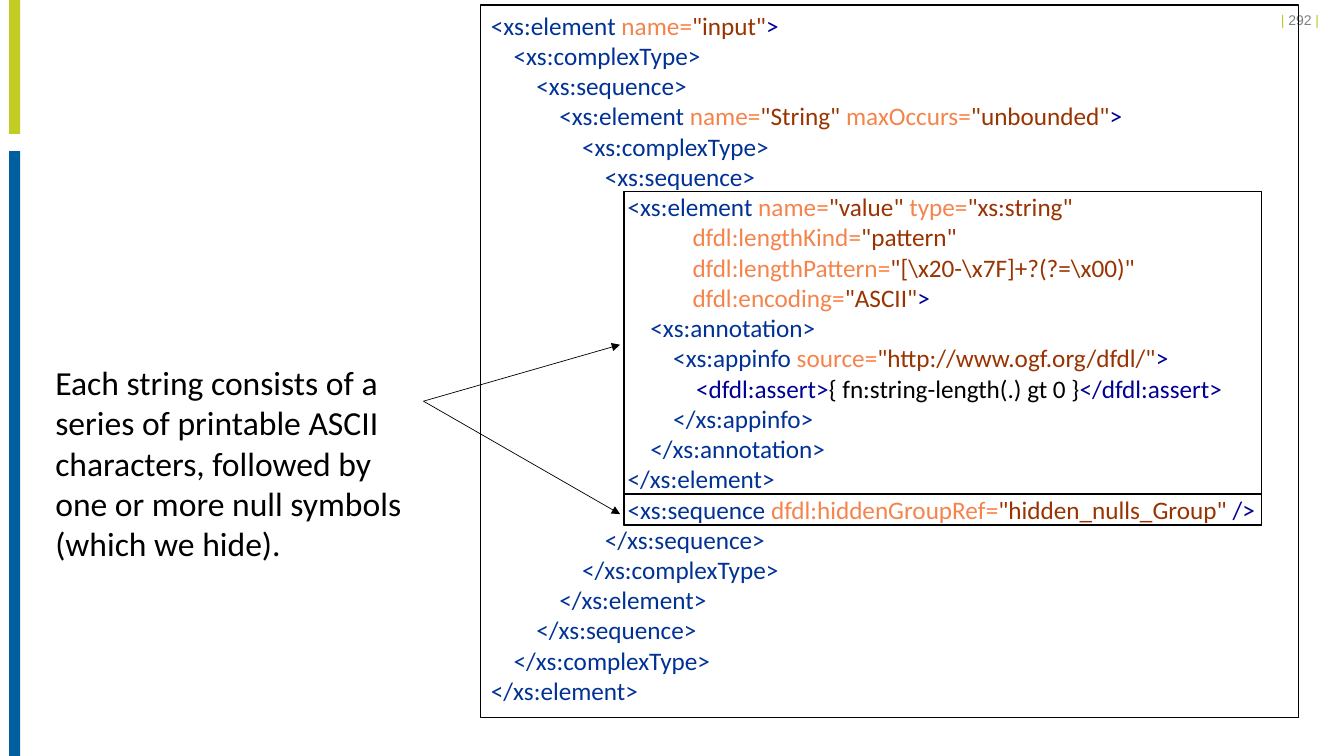
from pptx import Presentation
from pptx.dml.color import RGBColor
from pptx.enum.shapes import MSO_CONNECTOR, MSO_SHAPE
from pptx.enum.text import MSO_ANCHOR, PP_ALIGN
from pptx.oxml.ns import qn
from pptx.util import Inches, Pt
from lxml.etree import SubElement

COLORS = {
    "lime": "C1CD23", "blue": "005F9E", "grey": "808080", "black": "000000",
    "tag": "003296", "name": "F5844C", "equals": "FF8040", "value": "993300",
    "end": "000096", "text": "000000",
}

NOTE = ("Each string consists of a series of printable ASCII characters, "
        "followed by one or more null symbols (which we hide).")
PAGE_NUMBER = [("lime", "| "), ("grey", "292 "), ("lime", "| ")]

CODE = [
    (0, [("tag", "<xs:element"), ("attribute", ' name="input"'), ("end", ">")]),
    (4, [("tag", "<xs:complexType>")]),
    (8, [("tag", "<xs:sequence>")]),
    (12, [("tag", "<xs:element"), ("attribute", ' name="String"'),
          ("attribute", ' maxOccurs="unbounded"'), ("end", ">")]),
    (16, [("tag", "<xs:complexType>")]),
    (20, [("tag", "<xs:sequence>")]),
    (24, [("tag", "<xs:element"), ("attribute", ' name="value"'),
          ("attribute", ' type="xs:string"')]),
    (28, [("attribute", '\tdfdl:lengthKind="pattern"')]),
    (28, [("attribute", '\tdfdl:lengthPattern=' + r'"[\x20-\x7F]+?(?=\x00)"')]),
    (28, [("attribute", '\tdfdl:encoding="ASCII"'), ("end", ">")]),
    (28, [("tag", "<xs:annotation>")]),
    (32, [("tag", "<xs:appinfo"),
          ("attribute", ' source="http://www.ogf.org/dfdl/"'), ("end", ">")]),
    (36, [("end", "<dfdl:assert>"), ("text", "{ fn:string-length(.) gt 0 }"),
          ("end", "</dfdl:assert>")]),
    (32, [("tag", "</xs:appinfo>")]),
    (28, [("tag", "</xs:annotation>")]),
    (24, [("tag", "</xs:element>")]),
    (24, [("tag", "<xs:sequence"),
          ("attribute", ' dfdl:hiddenGroupRef="hidden_nulls_Group"'), ("end", " />")]),
    (20, [("tag", "</xs:sequence>")]),
    (16, [("tag", "</xs:complexType>")]),
    (12, [("tag", "</xs:element>")]),
    (8, [("tag", "</xs:sequence>")]),
    (4, [("tag", "</xs:complexType>")]),
    (0, [("tag", "</xs:element>")]),
]

BARS = [("lime", 0, 1.33), ("blue", 1.5, 6)]
CODE_FRAME = (4.77, 0.05, 8.11, 7.07)
HIGHLIGHT_FRAMES = [(6.19, 1.9, 6.32, 3.31), (6.19, 4.9, 6.32, 0.31)]
ARROW_START = (4.2, 3.98)
ARROW_ENDS = [(6.15, 3.42), (6.15, 5.1)]


def color(name):
    return RGBColor.from_string(COLORS[name])


def add_rectangle(page, place, fill=None, line_width=None):
    shape = page.shapes.add_shape(MSO_SHAPE.RECTANGLE, *map(Inches, place))
    shape.shadow.inherit = False
    if fill:
        shape.fill.solid()
        shape.fill.fore_color.rgb = color(fill)
    else:
        shape.fill.background()
    if line_width:
        shape.line.color.rgb = color("black")
        shape.line.width = Pt(line_width)
    else:
        shape.line.fill.background()
    return shape


def add_span(para, text, color_name, size, font_name="Calibri"):
    span = para.add_run()
    span.text = text
    span.font.name = font_name
    span.font.size = Pt(size)
    span.font.color.rgb = color(color_name)


def add_text_box(page, place):
    box = page.shapes.add_textbox(*map(Inches, place))
    box.text_frame.word_wrap = True
    return box.text_frame.paragraphs[0]


def add_arrow(page, start, end):
    points = map(Inches, start + end)
    arrow = page.shapes.add_connector(MSO_CONNECTOR.STRAIGHT, *points)
    arrow.line.color.rgb = color("black")
    arrow.line.width = Pt(0.5)
    SubElement(arrow.line._get_or_add_ln(), qn("a:tailEnd"), type="triangle")
    SubElement(arrow._element.spPr, qn("a:effectLst"))


def code_pieces(indent, parts):
    if indent:
        yield "text", " " * indent
    for role, text in parts:
        if role == "attribute":
            yield from zip(("name", "equals", "value"), text.partition("="))
        else:
            yield role, text


def add_code(page):
    frame = add_rectangle(page, CODE_FRAME, line_width=0.75).text_frame
    frame.word_wrap = True
    frame.vertical_anchor = MSO_ANCHOR.TOP
    para = frame.paragraphs[0]
    para.alignment = PP_ALIGN.LEFT
    for number, (indent, parts) in enumerate(CODE):
        if number:
            para.add_line_break()
        for role, text in code_pieces(indent, parts):
            add_span(para, text, role, 18)


def main():
    deck = Presentation()
    deck.slide_width, deck.slide_height = Inches(13.33), Inches(7.5)
    page = deck.slides.add_slide(deck.slide_layouts[6])

    for fill, top, height in BARS:
        add_rectangle(page, (0.09, top, 0.11, height), fill=fill)

    para = add_text_box(page, (10.88, 0.07, 2.34, 0.27))
    para.alignment = PP_ALIGN.RIGHT
    for color_name, text in PAGE_NUMBER:
        add_span(para, text, color_name, 10, "Arial")

    add_code(page)
    for place in HIGHLIGHT_FRAMES:
        add_rectangle(page, place, line_width=1)
    for end in ARROW_ENDS:
        add_arrow(page, ARROW_START, end)

    add_span(add_text_box(page, (0.45, 3.54, 3.78, 2.12)), NOTE, "black", 24)
    deck.save("out.pptx")


if __name__ == "__main__":
    main()
